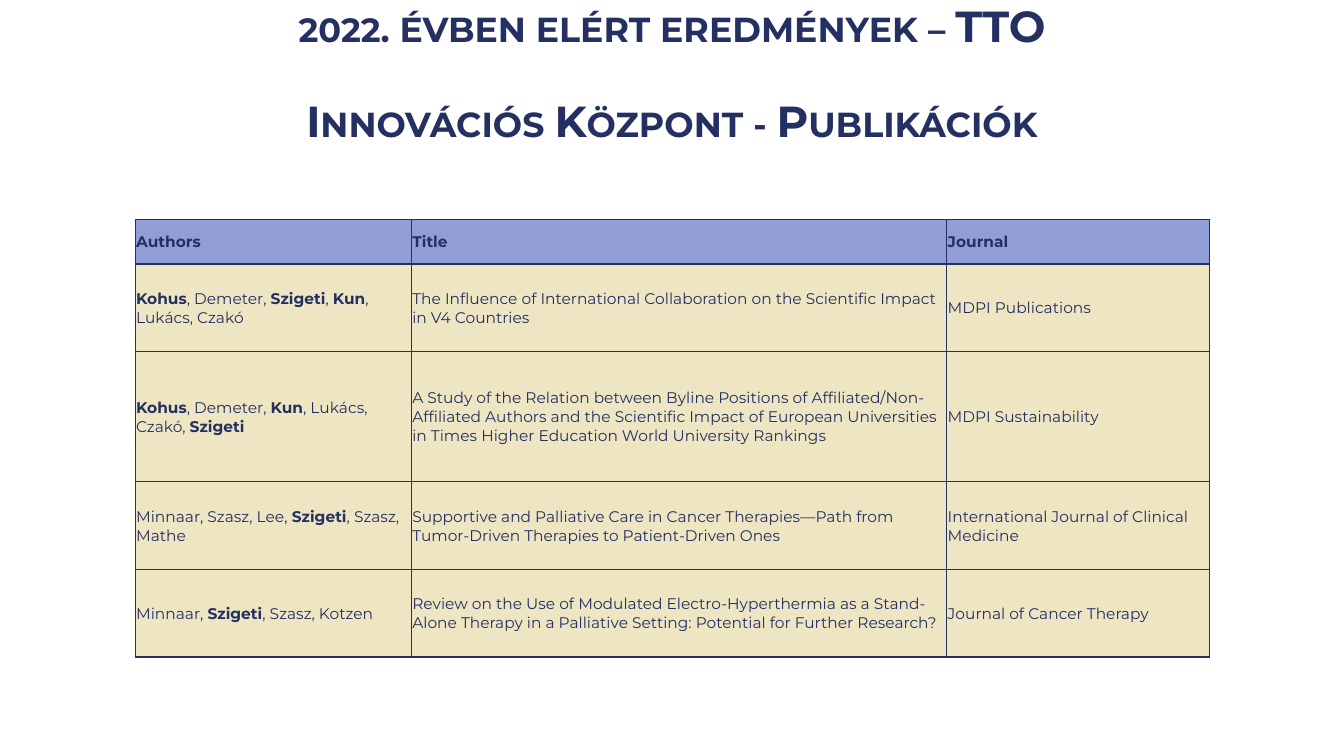
from dataclasses import dataclass

from lxml import etree
from pptx import Presentation
from pptx.dml.color import RGBColor
from pptx.enum.text import MSO_ANCHOR, MSO_AUTO_SIZE, PP_ALIGN
from pptx.oxml.ns import qn
from pptx.util import Inches, Pt

TOP, MIDDLE = MSO_ANCHOR.TOP, MSO_ANCHOR.MIDDLE
CENTER, LEFT = PP_ALIGN.CENTER, PP_ALIGN.LEFT
NO_AUTOFIT = MSO_AUTO_SIZE.NONE


@dataclass(frozen=True)
class Theme:
    font: str = "Montserrat"
    navy: str = "242F62"
    header_fill: str = "919DD7"
    body_fill: str = "EEE5C2"
    year_size: int = 30
    title_size: int = 31
    table_size: int = 11
    border: int = 1


THEME = Theme()


def style_run(run, size, bold):
    run.font.name = THEME.font
    run.font.size = Pt(size)
    run.font.bold = bold
    run.font.color.rgb = RGBColor.from_string(THEME.navy)


def add_borders(cell):
    properties = cell._tc.get_or_add_tcPr()
    for side in ("lnL", "lnR", "lnT", "lnB"):
        line = etree.SubElement(properties, qn(f"a:{side}"), w=str(Pt(THEME.border)))
        fill = etree.SubElement(line, qn("a:solidFill"))
        etree.SubElement(fill, qn("a:srgbClr"), val=THEME.navy)


prs = Presentation()
prs.slide_width, prs.slide_height = Inches(13.33), Inches(7.5)
slide = prs.slides.add_slide(prs.slide_layouts[5])

# Heading
heading = slide.shapes.title
heading.left, heading.top = Inches(0), Inches(0)
heading.width, heading.height = Inches(13.33), Inches(0.54)
heading_frame = heading.text_frame
heading_frame.auto_size = NO_AUTOFIT
heading_frame.word_wrap = True
heading_frame.vertical_anchor = TOP

heading_lines = [
    [("2022", THEME.year_size), (". évben elért eredmények – TTO", THEME.title_size)],
    [("Innovációs Központ - Publikációk", THEME.title_size)],
]
for index, parts in enumerate(heading_lines):
    line = heading_frame.paragraphs[0] if index == 0 else heading_frame.add_paragraph()
    line.alignment = CENTER
    line.line_spacing = 0.9
    line.space_before = Pt(34 * index)
    for text, size in parts:
        run = line.add_run()
        run.text = text
        style_run(run, size, True)
        run._r.get_or_add_rPr().set("cap", "small")

# Publications; names between asterisks are bold
publications = [
    ("*Authors*", "*Title*", "*Journal*"),
    ("*Kohus*, Demeter, *Szigeti*, *Kun*, Lukács, Czakó",
     "The Influence of International Collaboration on the Scientific Impact in V4 Countries",
     "MDPI Publications"),
    ("*Kohus*, Demeter, *Kun*, Lukács, Czakó, *Szigeti*",
     "A Study of the Relation between Byline Positions of Affiliated/Non-Affiliated Authors "
     "and the Scientific Impact of European Universities in Times Higher Education World "
     "University Rankings",
     "MDPI Sustainability"),
    ("Minnaar, Szasz, Lee, *Szigeti*, Szasz, Mathe",
     "Supportive and Palliative Care in Cancer Therapies—Path from Tumor-Driven Therapies "
     "to Patient-Driven Ones",
     "International Journal of Clinical Medicine"),
    ("Minnaar, *Szigeti*, Szasz, Kotzen",
     "Review on the Use of Modulated Electro-Hyperthermia as a Stand-Alone Therapy in a "
     "Palliative Setting: Potential for Further Research?",
     "Journal of Cancer Therapy"),
]
column_widths = [2.74, 5.31, 2.61]
row_heights = [0.44, 0.87, 1.29, 0.87, 0.87]

table = slide.shapes.add_table(
    len(row_heights), len(column_widths), Inches(1.34), Inches(2.18),
    Inches(sum(column_widths)), Inches(sum(row_heights))).table
table.horz_banding = False
for column, width in zip(table.columns, column_widths):
    column.width = Inches(width)

for row_index, (row, height, entries) in enumerate(zip(table.rows, row_heights, publications)):
    row.height = Inches(height)
    row_fill = THEME.header_fill if row_index == 0 else THEME.body_fill
    for cell, entry in zip(row.cells, entries):
        cell.vertical_anchor = MIDDLE
        cell.margin_left = cell.margin_right = cell.margin_top = Inches(0.01)
        cell.margin_bottom = Inches(0)
        add_borders(cell)
        cell.fill.solid()
        cell.fill.fore_color.rgb = RGBColor.from_string(row_fill)
        paragraph = cell.text_frame.paragraphs[0]
        paragraph.alignment = LEFT
        for part_index, text in enumerate(entry.split("*")):
            if text:
                run = paragraph.add_run()
                run.text = text
                style_run(run, THEME.table_size, part_index % 2 == 1)

prs.save("out.pptx")
